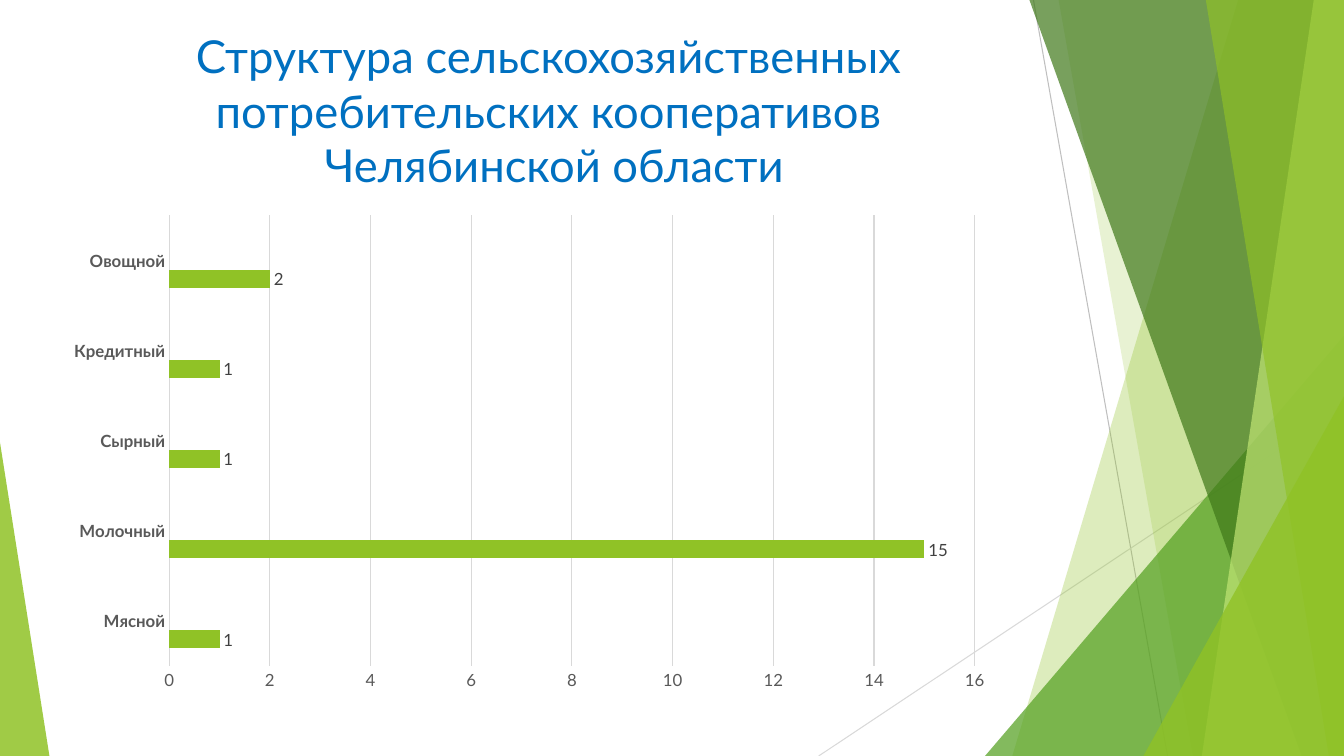
import pptx
import pptx.chart.data
import pptx.dml.color
import pptx.enum.chart
import pptx.enum.shapes
import pptx.enum.text
import pptx.oxml
import pptx.oxml.ns
import pptx.util
from dataclasses import dataclass
from lxml import etree

Inches, Pt = pptx.util.Inches, pptx.util.Pt
RGB = pptx.dml.color.RGBColor.from_string
qn = pptx.oxml.ns.qn


@dataclass(frozen=True)
class Theme:
    font: str = "Lato"
    title: str = "0070C0"
    lime: str = "90C226"
    green: str = "54A021"
    forest: str = "3F7819"
    pale: str = "C0E474"
    amber: str = "E6B91E"
    axis_text: str = "595959"
    label_text: str = "404040"
    grid: str = "D9D9D9"
    ray: str = "BFBFBF"
    title_size: float = 32.4
    chart_size: float = 12
    hairline: float = 0.75


T = Theme()
WIDTH, HEIGHT = 13.33, 7.5


def set_font(font, size, color, bold=False):
    font.name = T.font
    font.size = Pt(size)
    font.bold = bold
    font.color.rgb = RGB(color)


def set_line(line, color):
    line.color.rgb = RGB(color)
    line.width = Pt(T.hairline)


def tint(sp, color, opacity):
    """Flat fill with the given opacity in percent, no outline or shadow."""
    sp.shadow.inherit = False
    sp.line.fill.background()
    sp.fill.solid()
    sp.fill.fore_color.rgb = RGB(color)
    clr = sp.fill._xPr.find(qn("a:solidFill"))[0]
    etree.SubElement(clr, qn("a:alpha"), val=str(opacity * 1000))


def add_ray(slide, x1, y1, x2, y2, color):
    ray = slide.shapes.add_connector(
        pptx.enum.shapes.MSO_CONNECTOR.STRAIGHT,
        Inches(x1), Inches(y1), Inches(x2), Inches(y2))
    set_line(ray.line, color)
    etree.SubElement(ray._element.spPr, qn("a:effectLst"))


def add_facet(slide, box, top_x, bottom_x, color, opacity):
    """Full-height panel from a slanted left edge to the right of the box."""
    x, y, w, h = box
    right, bottom = Inches(x + w), Inches(y + h)
    fb = slide.shapes.build_freeform(Inches(x + top_x), Inches(y))
    fb.add_line_segments([(right, Inches(y)), (right, bottom),
                          (Inches(x + bottom_x), bottom)], close=True)
    tint(fb.convert_to_shape(), color, opacity)


def add_corner(slide, box, w, h, color, opacity, at_right=True):
    """Right-angled triangle in a lower corner of the box."""
    x, y, box_w, box_h = box
    left = x + box_w - w if at_right else x
    sp = slide.shapes.add_shape(
        pptx.enum.shapes.MSO_SHAPE.ISOSCELES_TRIANGLE,
        Inches(left), Inches(y + box_h - h), Inches(w), Inches(h))
    sp.adjustments[0] = 1 if at_right else 0
    tint(sp, color, opacity)


def add_decoration(slide, box):
    x, y, w, h = box
    right, bottom = x + w, y + h
    # Thin rays
    add_ray(slide, right - 3.08, y, right - 1.75, bottom, T.ray)
    add_ray(slide, right, y + 4.03, right - 5.21, bottom, T.grid)
    # Overlapping facets, back to front
    add_facet(slide, box, 12.28, 10.04, T.lime, 30)
    add_facet(slide, box, 10.5, 11.83, T.lime, 20)
    add_corner(slide, box, 3.56, 4.17, T.green, 72)
    add_facet(slide, box, 10.21, 12.91, T.forest, 70)
    add_facet(slide, box, 13.03, 11.92, T.pale, 70)
    add_facet(slide, box, 11.96, 13.18, T.lime, 65)
    add_corner(slide, box, 1.99, 3.57, T.lime, 80)
    add_corner(slide, box, 0.49, 3.11, T.lime, 85, at_right=False)


def add_title(slide, box, text):
    tf = slide.shapes.add_textbox(*map(Inches, box)).text_frame
    tf.word_wrap = True
    tf.vertical_anchor = pptx.enum.text.MSO_ANCHOR.MIDDLE
    p = tf.paragraphs[0]
    p.text = text
    p.alignment = pptx.enum.text.PP_ALIGN.CENTER
    for r in p.runs:
        set_font(r.font, T.title_size, T.title)


def set_plot_area(chart, x, y, w, h):
    """Fix the inner plot area, in fractions of the chart."""
    plot_area = chart._chartSpace.chart.plotArea
    for old in plot_area.findall(qn("c:layout")):
        plot_area.remove(old)
    layout = etree.Element(qn("c:layout"))
    manual = etree.SubElement(layout, qn("c:manualLayout"))
    settings = dict(layoutTarget="inner", xMode="edge", yMode="edge",
                    x=x, y=y, w=w, h=h)
    for tag, val in settings.items():
        etree.SubElement(manual, qn("c:" + tag), val=str(val))
    plot_area.insert(0, layout)


def add_bar_chart(slide, box, counts):
    data = pptx.chart.data.CategoryChartData()
    data.categories = list(counts)
    data.add_series("Series 1", list(counts.values()))
    for name in ("Series 2", "Series 3"):
        data.add_series(name, [None] * len(counts))
    chart = slide.shapes.add_chart(
        pptx.enum.chart.XL_CHART_TYPE.BAR_CLUSTERED,
        *map(Inches, box), data).chart
    chart.has_title = False
    chart.has_legend = False
    set_font(chart.font, T.chart_size, T.axis_text)
    set_plot_area(chart, 0.12, 0.02, 0.85, 0.91)

    # Bars and value labels
    plot = chart.plots[0]
    plot.gap_width = 186
    plot.overlap = 0
    plot.vary_by_categories = False
    for series, color in zip(plot.series, (T.lime, T.green, T.amber)):
        series.format.fill.solid()
        series.format.fill.fore_color.rgb = RGB(color)
    labels = plot.series[0].data_labels
    labels.show_value = True
    labels.position = pptx.enum.chart.XL_LABEL_POSITION.OUTSIDE_END
    set_font(labels.font, T.chart_size, T.label_text)

    # Axes
    for axis in (chart.category_axis, chart.value_axis):
        axis.major_tick_mark = pptx.enum.chart.XL_TICK_MARK.NONE
        axis.minor_tick_mark = pptx.enum.chart.XL_TICK_MARK.NONE
    cat, val = chart.category_axis, chart.value_axis
    set_font(cat.tick_labels.font, T.chart_size, T.axis_text, bold=True)
    set_line(cat.format.line, T.grid)
    set_font(val.tick_labels.font, T.chart_size, T.axis_text)
    val.format.line.fill.background()
    val.minimum_scale, val.maximum_scale, val.major_unit = 0, 16, 2
    val.has_major_gridlines = True
    set_line(val.major_gridlines.format.line, T.grid)


def main():
    prs = pptx.Presentation()
    prs.slide_width, prs.slide_height = Inches(WIDTH), Inches(HEIGHT)
    slide = prs.slides.add_slide(prs.slide_layouts[6])
    add_decoration(slide, (0, 0, WIDTH, HEIGHT))
    add_title(slide, (0.33, 0.23, 10.22, 1.72),
              "Структура сельскохозяйственных потребительских кооперативов\v"
              " Челябинской области")
    add_bar_chart(slide, (0.55, 2.04, 9.4, 4.91), {
        "Мясной": 1, "Молочный": 15, "Сырный": 1,
        "Кредитный": 1, "Овощной": 2})
    prs.save("out.pptx")


if __name__ == "__main__":
    main()
